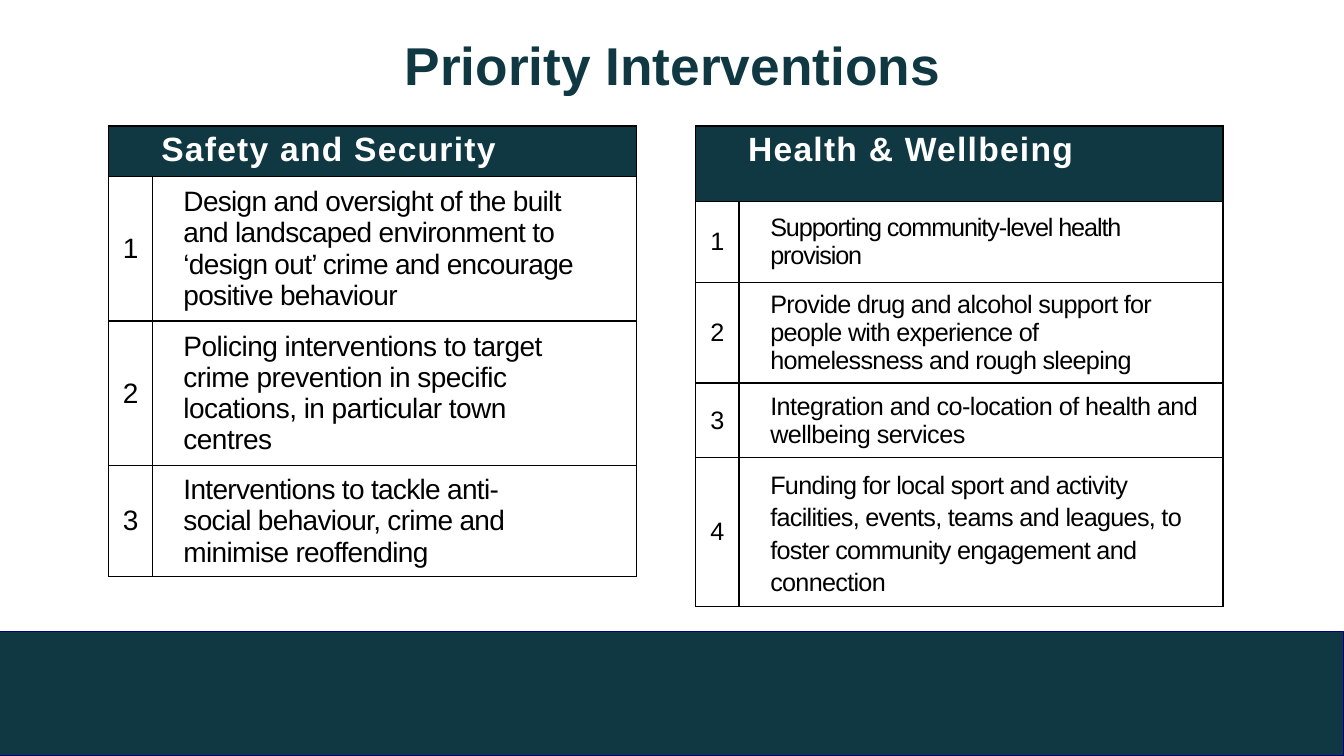
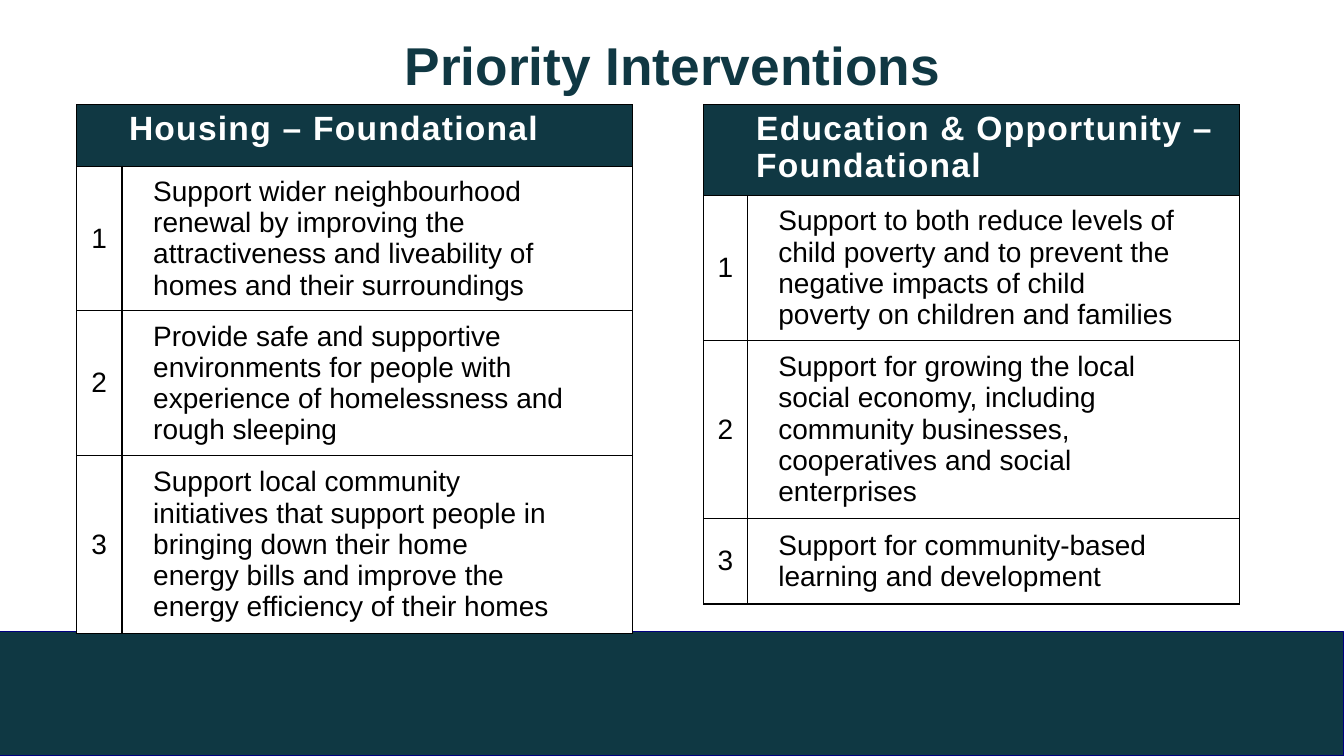
from lxml import etree
from pptx import Presentation
from pptx.dml.color import RGBColor
from pptx.enum.shapes import MSO_SHAPE
from pptx.enum.text import MSO_ANCHOR, PP_ALIGN
from pptx.oxml.ns import qn
from pptx.util import Inches, Pt

FONT = "Arial"
BAND = "0F3843"
BAND_LINE = "000080"
TEAL = "103843"
WHITE = "FFFFFF"
BLACK = "000000"
TITLE = "Priority Interventions"

# Each table: heading, left, top, column widths, header height, text size, rows.
# Each row: height, right margin, letter spacing, line spacing, text.
SLIDES = [
    [
        ("Safety and Security", 1.08, 1.25, (0.43, 4.8), 0.48, 20, [
            (1.34, 0.45, -0.5, 1, "Design and oversight of the built and landscaped environment to "
             "‘design out’ crime and encourage positive behaviour"),
            (1.34, 0.45, -0.4, 1, "Policing interventions to target crime prevention in specific "
             "locations, in particular town centres"),
            (1.03, 0.95, -0.5, 1, "Interventions to tackle anti-social behaviour, crime and "
             "minimise reoffending"),
        ]),
        ("Health & Wellbeing", 6.9, 1.25, (0.43, 4.8), 0.75, 18, [
            (0.8, 0.4, -0.8, 1, "Supporting community-level health provision"),
            (0.94, 0.4, -0.5, 1, "Provide drug and alcohol support for people with experience of "
             "homelessness and rough sleeping"),
            (0.74, 0.1, -0.4, 1, "Integration and co-location of health and wellbeing services"),
            (1.37, 0.1, -0.5, 1.15, "Funding for local sport and activity facilities, events, "
             "teams and leagues, to foster community engagement and connection"),
        ]),
    ],
    [
        ("Housing – Foundational", 0.76, 1.04, (0.45, 5.06), 0.61, 20, [
            (1.34, 0.58, 0, 1, "Support wider neighbourhood renewal by improving the "
             "attractiveness and liveability of homes and their surroundings"),
            (1.34, 0.58, 0, 1, "Provide safe and supportive environments for people with "
             "experience of homelessness and rough sleeping"),
            (1.66, 0.78, 0, 1, "Support local community initiatives that support people in "
             "bringing down their home energy bills and improve the energy efficiency "
             "of their homes"),
        ]),
        ("Education & Opportunity – Foundational", 6.98, 1.04, (0.43, 4.88), 0.84, 20, [
            (1.34, 0.58, 0, 1, "Support to both reduce levels of child poverty and to prevent "
             "the negative impacts of child poverty on children and families"),
            (1.66, 0.58, 0, 1, "Support for growing the local social economy, including "
             "community businesses, cooperatives and social enterprises"),
            (0.85, 0.58, 0, 1, "Support for community-based learning and development"),
        ]),
    ],
]


def color(value):
    return RGBColor.from_string(value)


def write_text(frame, text, size, fill=BLACK, bold=False, align=PP_ALIGN.LEFT,
               line_spacing=1, letter_spacing=0):
    """Fill the first paragraph of a text frame; letter spacing is in points."""
    paragraph = frame.paragraphs[0]
    paragraph.alignment = align
    paragraph.line_spacing = line_spacing
    run = paragraph.add_run()
    run.text = text
    font = run.font
    font.name, font.size, font.bold = FONT, Pt(size), bold
    font.color.rgb = color(fill)
    if letter_spacing:
        run._r.get_or_add_rPr().set("spc", str(round(letter_spacing * 100)))


presentation = Presentation()
presentation.slide_width = Inches(13.33)
presentation.slide_height = Inches(7.5)

for tables in SLIDES:
    slide = presentation.slides.add_slide(presentation.slide_layouts[6])

    band = slide.shapes.add_shape(
        MSO_SHAPE.RECTANGLE, 0, Inches(6.27), presentation.slide_width, Inches(1.23))
    band.shadow.inherit = False
    band.fill.solid()
    band.fill.fore_color.rgb = color(BAND)
    band.line.color.rgb = color(BAND_LINE)
    band.line.width = Pt(0.75)

    title = slide.shapes.add_textbox(Inches(0.67), Inches(0.28), Inches(12), Inches(0.79))
    title.text_frame.word_wrap = True
    title.text_frame.vertical_anchor = MSO_ANCHOR.MIDDLE
    write_text(title.text_frame, TITLE, 38, TEAL, bold=True,
               align=PP_ALIGN.CENTER, line_spacing=0.93)

    for heading, left, top, widths, header_height, size, rows in tables:
        heights = [header_height] + [row[0] for row in rows]
        table = slide.shapes.add_table(
            len(heights), 2, Inches(left), Inches(top),
            Inches(sum(widths)), Inches(sum(heights))).table
        for column, width in zip(table.columns, widths):
            column.width = Inches(width)
        for table_row, height in zip(table.rows, heights):
            table_row.height = Inches(height)

        for cell in table.iter_cells():
            properties = cell._tc.get_or_add_tcPr()
            for side in ("lnL", "lnR", "lnT", "lnB"):
                border = etree.SubElement(properties, qn(f"a:{side}"), w=str(Pt(1)))
                line_fill = etree.SubElement(border, qn("a:solidFill"))
                etree.SubElement(line_fill, qn("a:srgbClr"), val=BLACK)
            cell.fill.solid()
            cell.fill.fore_color.rgb = color(WHITE)
            cell.vertical_anchor = MSO_ANCHOR.MIDDLE

        header = table.cell(0, 0)
        header.merge(table.cell(0, 1))
        header.fill.fore_color.rgb = color(TEAL)
        header.vertical_anchor = MSO_ANCHOR.TOP
        header.margin_left = Inches(0.52)
        write_text(header.text_frame, heading, 24, WHITE, bold=True, letter_spacing=0.9)

        for number, (_, margin, letter_spacing, line_spacing, text) in enumerate(rows, 1):
            write_text(table.cell(number, 0).text_frame, str(number), size,
                       align=PP_ALIGN.CENTER)
            intervention = table.cell(number, 1)
            intervention.margin_left = Inches(0.31)
            intervention.margin_right = Inches(margin)
            write_text(intervention.text_frame, text, size,
                       line_spacing=line_spacing, letter_spacing=letter_spacing)

presentation.save("out.pptx")
